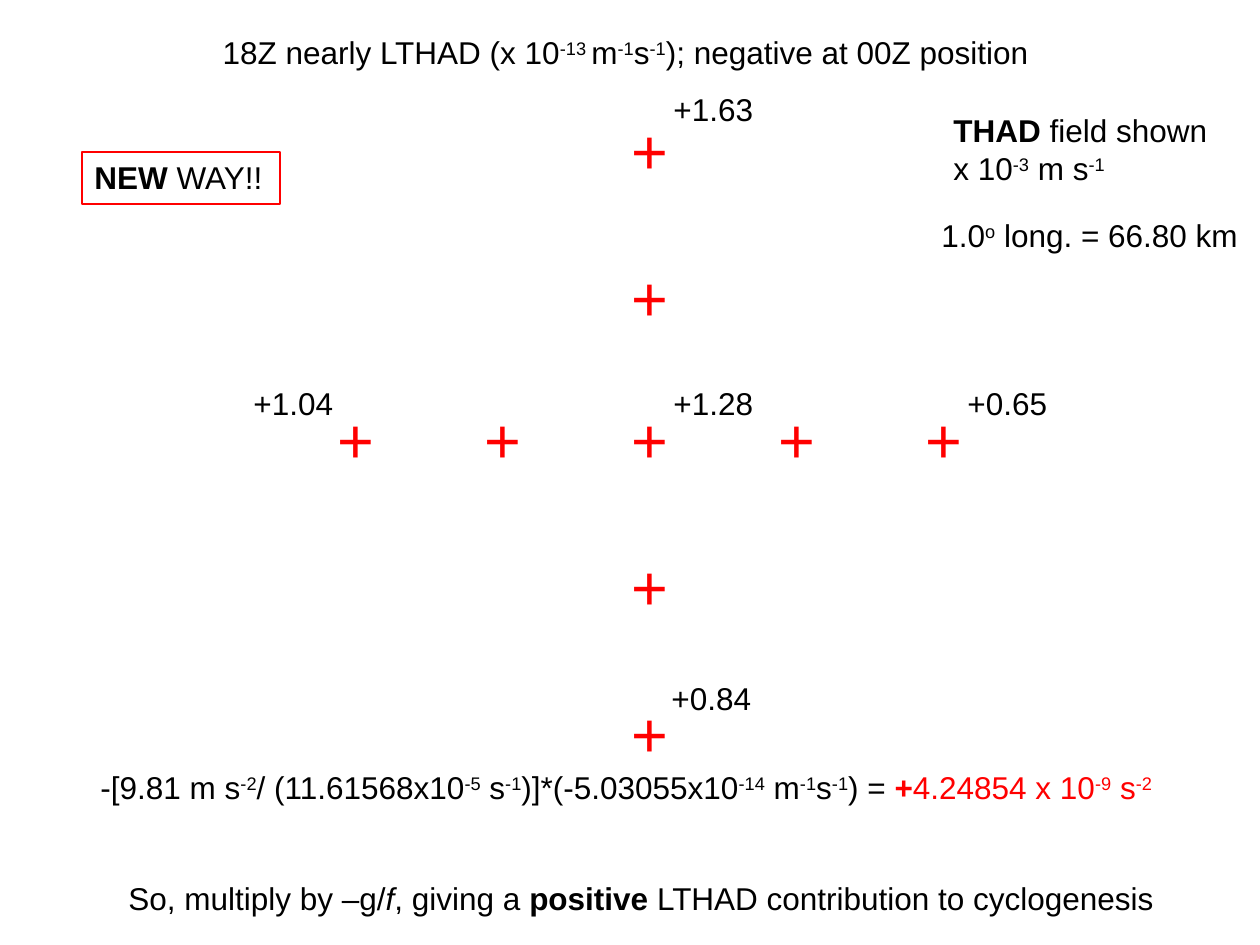
from lxml import etree
from pptx import Presentation
from pptx.dml.color import RGBColor
from pptx.enum.text import MSO_ANCHOR, MSO_AUTO_SIZE, PP_ALIGN
from pptx.oxml.ns import qn
from pptx.util import Inches, Pt

FIT = MSO_AUTO_SIZE.SHAPE_TO_FIT_TEXT
TOP = MSO_ANCHOR.TOP
LEFT = PP_ALIGN.LEFT
TITLE_ONLY = 5
SCALE = Inches(1) / 126
COLORS = {"text": "000000", "accent": "FF0000", "back": "FFFFFF"}


def px(n):
    return round(n * SCALE)


def rgb(name):
    return RGBColor.from_string(COLORS[name])


def sup(text, color=None):
    return text, "sup", color


def bold(text, color=None):
    return text, "bold", color


def italic(text):
    return text, "italic", None


class Board:
    def __init__(self, slide, font="Arial", size=18):
        self.s, self.font, self.size = slide, font, size

    def set_text(self, sp, lines, size=None, color="text", wrap=False):
        """Fill sp with lines; each is a list of strings or (text, style, color)."""
        tf = sp.text_frame
        tf.word_wrap, tf.auto_size, tf.vertical_anchor = wrap, FIT, TOP
        for i, line in enumerate(lines):
            p = tf.add_paragraph() if i else tf.paragraphs[0]
            p.alignment = LEFT
            p.font.name, p.font.size = self.font, Pt(size or self.size)
            p.font.color.rgb = rgb(color)
            for part in line:
                text, style, tint = (part, None, None) if isinstance(part, str) else part
                r = p.add_run()
                r.text = text
                if style == "sup":
                    r._r.get_or_add_rPr().set("baseline", "30000")
                elif style == "bold":
                    r.font.bold = True
                elif style == "italic":
                    r.font.italic = True
                if tint:
                    r.font.color.rgb = rgb(tint)

    def fill(self, sp, alpha=None):
        sp.fill.solid()
        sp.fill.fore_color.rgb = rgb("back")
        if alpha:
            clr = sp._element.spPr.find(qn("a:solidFill")).find(qn("a:srgbClr"))
            etree.SubElement(clr, qn("a:alpha")).set("val", str(alpha * 1000))

    def title(self, box, line):
        sp = self.s.shapes.title
        sp.left, sp.top, sp.width, sp.height = map(px, box)
        self.fill(sp)
        self.set_text(sp, [line])

    def note(self, box, *lines, alpha=None, border=None):
        sp = self.s.shapes.add_textbox(*map(px, box))
        self.fill(sp, alpha)
        if border:
            sp.line.color.rgb = rgb(border)
            sp.line.width = Pt(0.75)
        self.set_text(sp, lines)

    def value(self, x, y, text):
        self.note((x, y, 106, 50), [text], alpha=85)

    def cross(self, x, y):
        sp = self.s.shapes.add_textbox(*map(px, (x, y, 53, 89)))
        self.set_text(sp, [["+"]], size=36, color="accent", wrap=True)


def main():
    prs = Presentation()
    prs.slide_width, prs.slide_height = Inches(10), Inches(7.5)
    board = Board(prs.slides.add_slide(prs.slide_layouts[TITLE_ONLY]))

    board.title((210, 27, 848, 50), [
        "18Z nearly LTHAD (x 10", sup("-13 "), "m", sup("-1"), "s", sup("-1"),
        "); negative at 00Z position"])
    board.note((116, 873, 1052, 50), [
        "So, multiply by –g/", italic("f"), ", giving a ", bold("positive"),
        " LTHAD contribution to cyclogenesis"])
    board.note((82, 152, 198, 52), [bold("NEW"), " WAY!!"], border="accent")
    board.note((941, 105, 280, 88), [bold("THAD"), " field shown"],
               ["x 10", sup("-3"), " m s", sup("-1")])
    board.note((929, 210, 326, 50), ["1.0", sup("o"), " long. = 66.80 km"])

    for x, y, text in [(955, 378, "+0.65"), (241, 378, "+1.04"), (661, 378, "+1.28"),
                       (661, 84, "+1.63"), (659, 673, "+0.84")]:
        board.value(x, y, text)

    columns = [325 + 147 * i for i in range(5)]
    mid_x, mid_y = columns[2], 394
    for x in columns:
        board.cross(x, mid_y)
    for y in (105, 252, 541, 688):
        board.cross(mid_x, y)

    board.note((88, 762, 1142, 50), [
        "-[9.81 m s", sup("-2"), "/ (11.61568x10", sup("-5"), " s", sup("-1"),
        ")]*(-5.03055x10", sup("-14"), " m", sup("-1"), "s", sup("-1"), ") = ",
        bold("+", "accent"), ("4.24854 x 10", None, "accent"), sup("-9", "accent"),
        (" s", None, "accent"), sup("-2", "accent")])

    prs.save("out.pptx")


if __name__ == "__main__":
    main()
